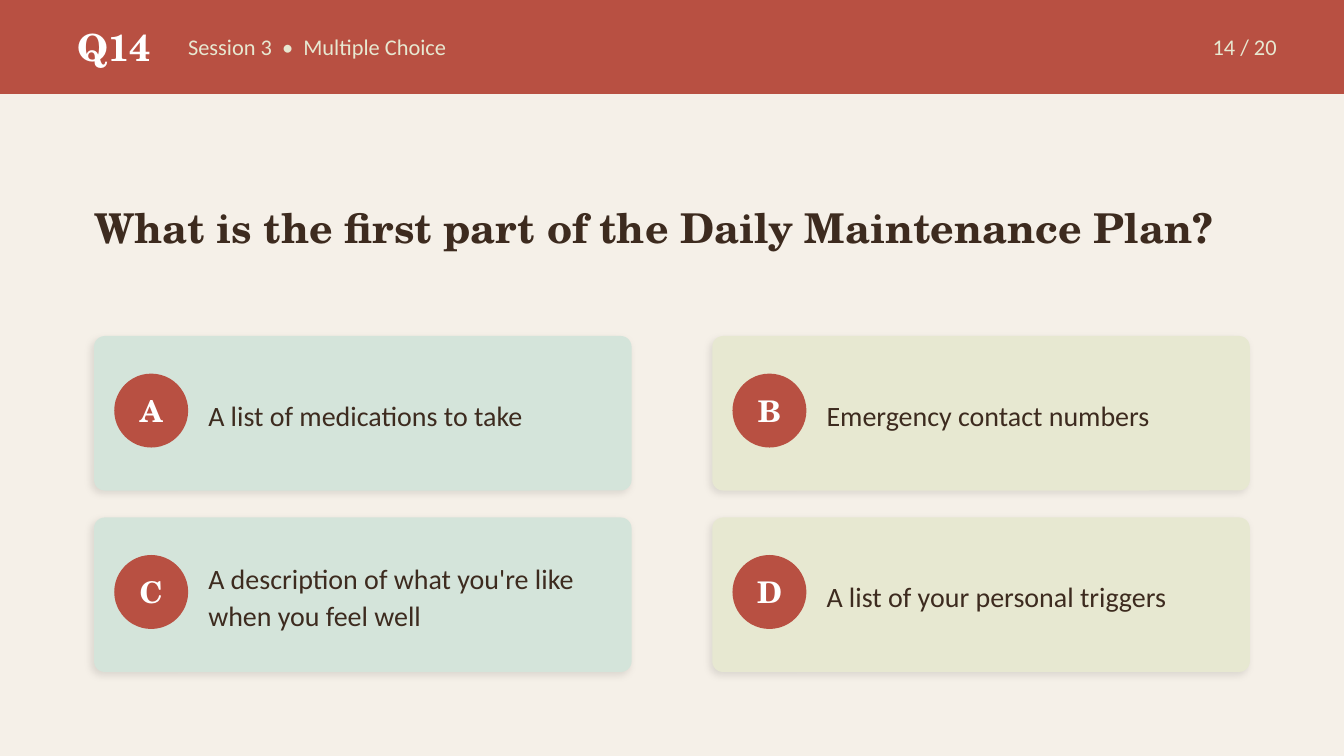
import pptx
import pptx.util
import pptx.dml.color
import pptx.enum.shapes
import pptx.enum.text
import pptx.oxml
import pptx.oxml.ns

RGBColor = pptx.dml.color.RGBColor
SHAPE = pptx.enum.shapes.MSO_SHAPE
ALIGN = pptx.enum.text.PP_ALIGN

CREAM = RGBColor(0xF5, 0xF0, 0xE8)
RUST = RGBColor(0xB8, 0x50, 0x42)
BROWN = RGBColor(0x3D, 0x2B, 0x1F)
MINT = RGBColor(0xD4, 0xE4, 0xDA)
SAND = RGBColor(0xE7, 0xE8, 0xD1)
WHITE = RGBColor(0xFF, 0xFF, 0xFF)
SERIF, SANS = "TeX Gyre Schola", "Calibri"

# 16:9 slide on a square grid, 100 columns across
WIDTH = pptx.util.Inches(10)
HEIGHT = pptx.util.Emu(WIDTH * 9 // 16)
CELL = WIDTH / 100

ANSWERS = [
    ("A", "A list of medications to take"),
    ("B", "Emergency contact numbers"),
    ("C", "A description of what you're like when you feel well"),
    ("D", "A list of your personal triggers"),
]


def emu(*cells):
    return [pptx.util.Emu(round(c * CELL)) for c in cells]


def set_text(sp, text, font, size, color, bold=False, align=ALIGN.LEFT, spacing=None):
    tf = sp.text_frame
    tf.text = text
    tf.word_wrap = True
    tf.auto_size = pptx.enum.text.MSO_AUTO_SIZE.NONE
    tf.vertical_anchor = pptx.enum.text.MSO_ANCHOR.MIDDLE
    tf.margin_left = tf.margin_right = tf.margin_top = tf.margin_bottom = 0
    p = tf.paragraphs[0]
    p.alignment, p.line_spacing = align, spacing
    f = p.runs[0].font
    f.name, f.size, f.bold = font, pptx.util.Pt(size), bold
    f.color.rgb = color


def add_text(s, box, text, *style, **options):
    set_text(s.shapes.add_textbox(*emu(*box)), text, *style, **options)


def add_filled(s, kind, box, color):
    sp = s.shapes.add_shape(kind, *emu(*box))
    sp.shadow.inherit = False
    sp.fill.solid()
    sp.fill.fore_color.rgb = color
    sp.line.fill.background()
    return sp


def add_soft_shadow(sp):
    effects = sp._element.spPr.find(pptx.oxml.ns.qn("a:effectLst"))
    effects.append(pptx.oxml.parse_xml(
        f'<a:outerShdw {pptx.oxml.ns.nsdecls("a")} blurRad="{pptx.util.Pt(4)}" '
        f'dist="{pptx.util.Pt(2)}" dir="{135 * 60000}" algn="bl" rotWithShape="0">'
        '<a:srgbClr val="000000"><a:alpha val="10000"/></a:srgbClr></a:outerShdw>'))


# Band with question number, session and progress
def header(s, x, y, w, h):
    add_filled(s, SHAPE.RECTANGLE, (x, y, w, h), RUST)
    top, height = y + 0.8, h - 1.6
    add_text(s, (x + 5, top, 7, height), "Q14", SERIF, 20, WHITE, bold=True,
             align=ALIGN.CENTER)
    add_text(s, (x + 14, top, 50, height), "Session 3  •  Multiple Choice", SANS, 12, SAND)
    add_text(s, (x + w - 20, top, 15, height), "14 / 20", SANS, 12, SAND,
             align=ALIGN.RIGHT)


# Question in the title placeholder
def question(s, x, y, w, h):
    sp = s.shapes.title
    sp.left, sp.top, sp.width, sp.height = emu(x, y, w, h)
    set_text(sp, "What is the first part of the Daily Maintenance Plan?",
             SERIF, 22, BROWN, bold=True, spacing=1.2)


# Card with a lettered badge and the answer
def answer_card(s, x, y, w, h, letter, text, color):
    card = add_filled(s, SHAPE.ROUNDED_RECTANGLE, (x, y, w, h), color)
    card.adjustments[0] = 0.07
    add_soft_shadow(card)
    badge = add_filled(s, SHAPE.OVAL, (x + 1.5, y + 2.8, 5.5, 5.5), RUST)
    set_text(badge, letter, SERIF, 16, WHITE, bold=True, align=ALIGN.CENTER)
    add_text(s, (x + 8.5, y + 1, w - 11, h - 2), text, SANS, 15, BROWN, spacing=1.1)


# Two by two answers, filling the box from edge to edge
def answer_grid(s, x, y, w, h):
    card_w, card_h = 40, 11.5
    for i, (letter, text) in enumerate(ANSWERS):
        row, col = divmod(i, 2)
        answer_card(s, x + col * (w - card_w), y + row * (h - card_h), card_w, card_h,
                    letter, text, (MINT, SAND)[col])


def main():
    prs = pptx.Presentation()
    prs.slide_width, prs.slide_height = WIDTH, HEIGHT
    s = prs.slides.add_slide(prs.slide_layouts[5])
    s.background.fill.solid()
    s.background.fill.fore_color.rgb = CREAM

    header(s, 0, 0, 100, 7)
    question(s, 7, 11, 86, 11)
    answer_grid(s, 7, 25, 86, 25)

    prs.save("out.pptx")


if __name__ == "__main__":
    main()
